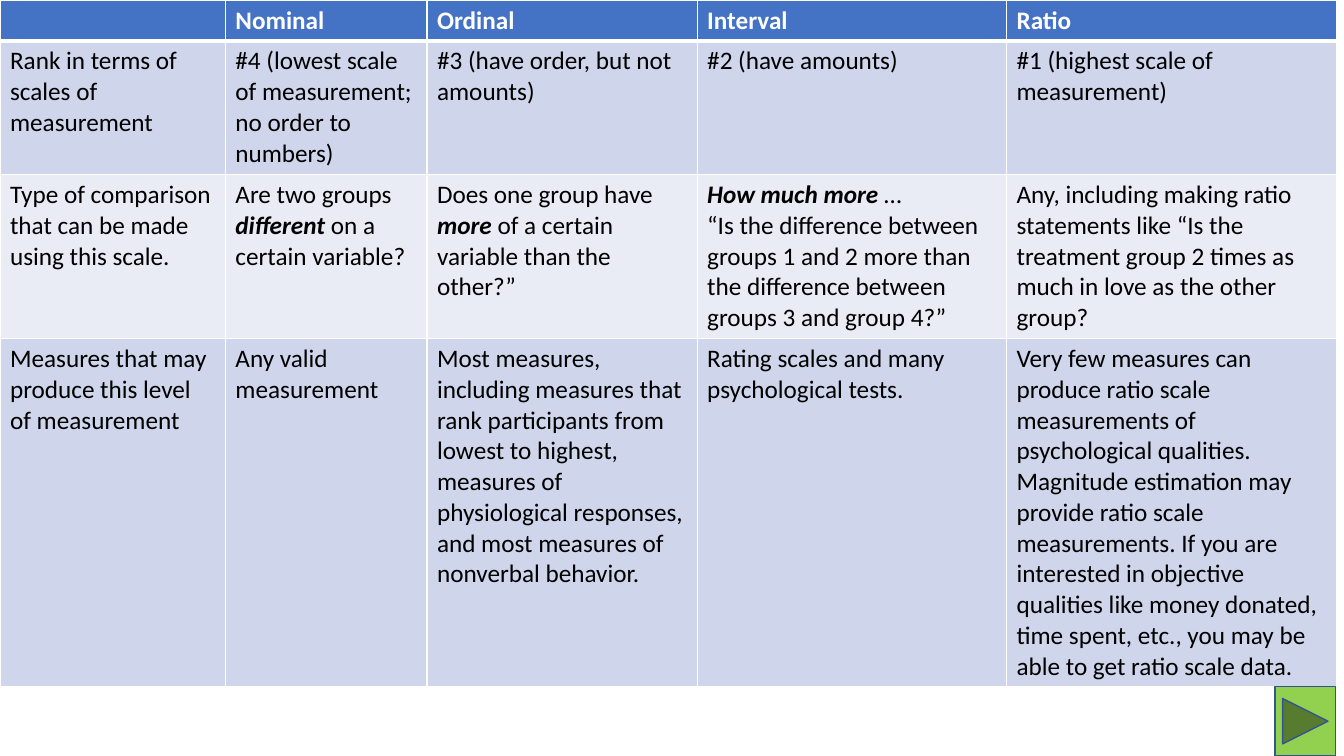
from lxml.etree import SubElement
from pptx import Presentation
from pptx.dml.color import RGBColor
from pptx.enum.shapes import MSO_SHAPE
from pptx.oxml import parse_xml
from pptx.oxml.ns import nsdecls
from pptx.util import Pt

WHITE = RGBColor(0xFF, 0xFF, 0xFF)
BLACK = RGBColor(0x00, 0x00, 0x00)
HEADER = RGBColor(0x44, 0x72, 0xC4)
BAND_DARK = RGBColor(0xCF, 0xD5, 0xEA)
BAND_LIGHT = RGBColor(0xE9, 0xEB, 0xF5)
GREEN = RGBColor(0x92, 0xD0, 0x50)
OUTLINE = RGBColor(0x32, 0x54, 0x91)

COL_WIDTHS = [161, 144, 193, 221, 235.5]
ROW_HEIGHTS = [28.5, 95.5, 117, 249]
EMPHASIS = "*"

SCALES = [
    ["", "Nominal", "Ordinal", "Interval", "Ratio"],
    [
        "Rank in terms of scales of measurement",
        "#4 (lowest scale of measurement; no order to numbers)",
        "#3 (have order, but not amounts)",
        "#2 (have amounts)",
        "#1 (highest scale of measurement)",
    ],
    [
        "Type of comparison that can be made using this scale.",
        "Are two groups *different* on a certain variable?",
        "Does one group have *more* of a certain variable than the other?”",
        "*How much more *…\n“Is the difference between groups 1 and 2 more than "
        "the difference between groups 3 and group 4?”",
        "Any, including making ratio statements like “Is the treatment group "
        "2 times as much in love as the other group?",
    ],
    [
        "Measures that may produce this level of measurement",
        "Any valid measurement",
        "Most measures, including measures that rank participants from lowest to "
        "highest, measures of physiological responses, and most measures of "
        "nonverbal behavior.",
        "Rating scales and many psychological tests.",
        "Very few measures can produce ratio scale measurements of psychological "
        "qualities. Magnitude estimation may provide ratio scale measurements. "
        "If you are interested in objective qualities like money donated, time "
        "spent, etc., you may be able to get ratio scale data.",
    ],
]


class SlideBuilder:
    font = "Calibri"
    size = 18

    def __init__(self, slide):
        self.slide = slide

    def text(self, tf, text, color, bold):
        for i, line in enumerate(text.split("\n")):
            p = tf.paragraphs[0] if i == 0 else tf.add_paragraph()
            p.font.name = self.font
            p.font.size = Pt(self.size)
            p.font.color.rgb = color
            p.font.bold = bold
            for j, part in enumerate(line.split(EMPHASIS)):
                if part:
                    r = p.add_run()
                    r.text = part
                    if j % 2:
                        r.font.bold = r.font.italic = True

    def borders(self, cell, widths):
        tc_pr = cell._tc.get_or_add_tcPr()
        for i, (side, width) in enumerate(widths.items()):
            ln = parse_xml(f'<a:ln{side} {nsdecls("a")} w="{Pt(width)}"/>')
            fill = SubElement(ln, ln.tag.replace(f"ln{side}", "solidFill"))
            SubElement(fill, ln.tag.replace(f"ln{side}", "srgbClr"), val=str(WHITE))
            tc_pr.insert(i, ln)

    def table(self, x, y, col_widths, row_heights, rows):
        table = self.slide.shapes.add_table(
            len(rows), len(col_widths), Pt(x), Pt(y),
            Pt(sum(col_widths)), Pt(sum(row_heights)),
        ).table
        for column, width in zip(table.columns, col_widths):
            column.width = Pt(width)
        for i, (row, height, texts) in enumerate(zip(table.rows, row_heights, rows)):
            row.height = Pt(height)
            header = i == 0
            band = BAND_DARK if i % 2 else BAND_LIGHT
            for cell, text in zip(row.cells, texts):
                cell.fill.solid()
                cell.fill.fore_color.rgb = HEADER if header else band
                self.text(cell.text_frame, text, WHITE if header else BLACK, header)
                top = 3 if i == 1 else 1
                bottom = 3 if header else 1
                self.borders(cell, {"L": 1, "R": 1, "T": top, "B": bottom})

    def button(self, kind, x, y, w, h):
        sp = self.slide.shapes.add_shape(kind, Pt(x), Pt(y), Pt(w), Pt(h))
        sp.shadow.inherit = False
        sp.fill.solid()
        sp.fill.fore_color.rgb = GREEN
        sp.line.color.rgb = OUTLINE
        sp.line.width = Pt(1)


def main():
    prs = Presentation()
    prs.slide_width, prs.slide_height = Pt(960), Pt(540)
    s = SlideBuilder(prs.slides.add_slide(prs.slide_layouts[6]))
    s.table(0, 0, COL_WIDTHS, ROW_HEIGHTS, SCALES)
    s.button(MSO_SHAPE.ACTION_BUTTON_FORWARD_OR_NEXT, 910.8, 490.3, 43.2, 49.7)
    prs.save("out.pptx")


if __name__ == "__main__":
    main()
